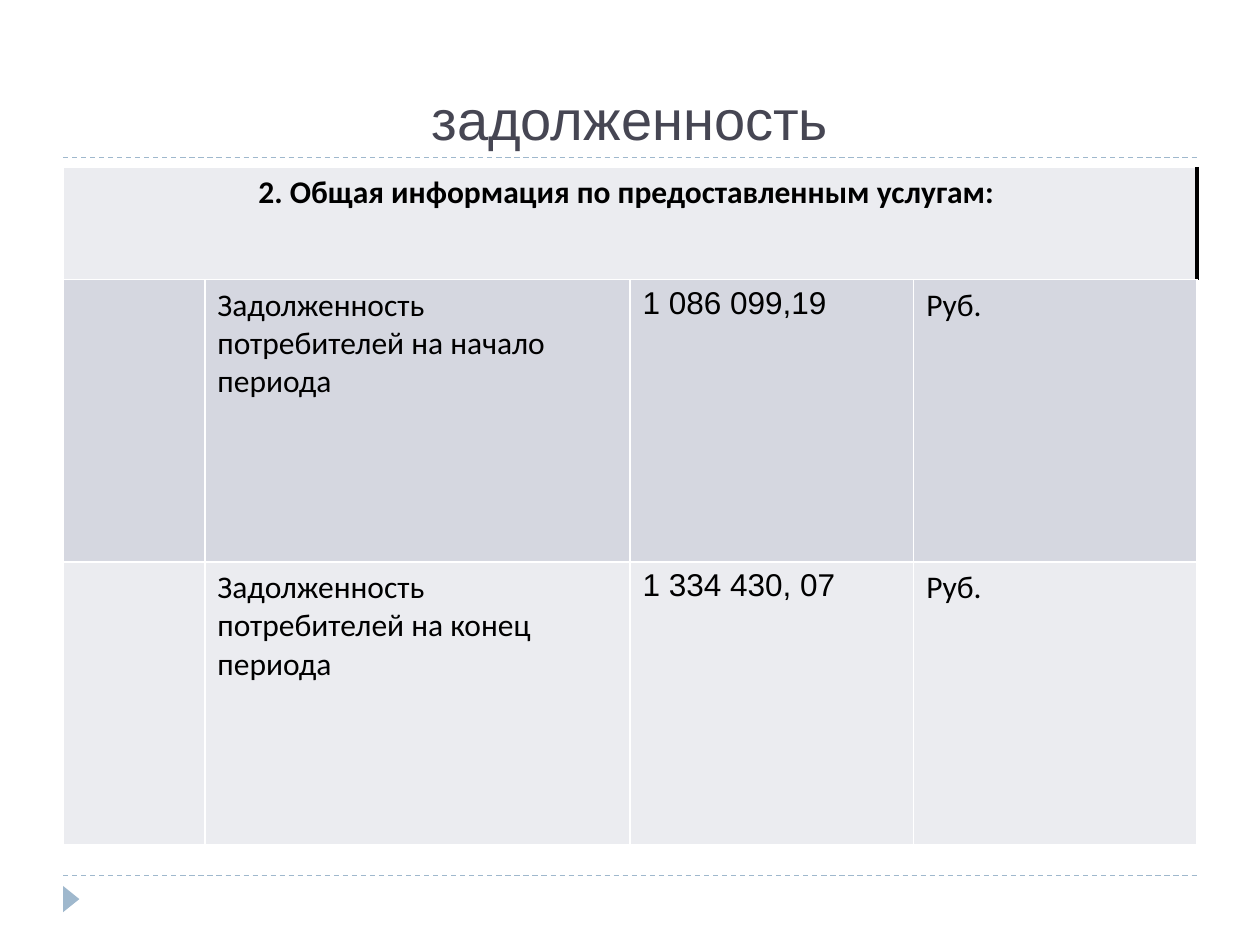
from dataclasses import dataclass

from lxml.etree import SubElement
from pptx import Presentation
from pptx.dml.color import RGBColor
from pptx.enum.dml import MSO_LINE
from pptx.enum.shapes import MSO_CONNECTOR, MSO_SHAPE
from pptx.enum.text import MSO_ANCHOR, PP_ALIGN
from pptx.oxml.ns import qn
from pptx.slide import Slide
from pptx.table import Table, _Cell
from pptx.text.text import TextFrame
from pptx.util import Cm, Pt


@dataclass(frozen=True)
class Theme:
    title_color: str = "464653"
    text_color: str = "000000"
    accent: str = "9FB8CD"
    light_band: str = "EBECF0"
    dark_band: str = "D5D7E0"
    grid: str = "FFFFFF"
    heading_font: str = "Arial"
    body_font: str = "Calibri"
    title_size: float = 32
    body_size: float = 18
    rule_width: float = 0.75
    grid_width: float = 1
    edge_width: float = 2.25


@dataclass(frozen=True)
class DebtRow:
    label: str
    amount: str
    unit: str
    fill: str


THEME = Theme()
LEFT, WIDTH = 1.27, 22.86
COLUMN_WIDTHS = (2.86, 8.57, 5.72, 5.71)
ROW_HEIGHTS = (2.26, 5.69, 5.69)
RULE_TOPS = (17.65, 3.18)
TABLE_HEADING = "2. Общая информация по предоставленным услугам: "
DEBT_ROWS = (
    DebtRow("Задолженность потребителей на начало периода", "1 086 099,19", "Руб.", THEME.dark_band),
    DebtRow("Задолженность потребителей на конец периода", "1 334 430, 07", "Руб.", THEME.light_band),
)


def write_text(text_frame: TextFrame, text: str, font_name: str, size: float, color: str,
               bold: bool = False, alignment: PP_ALIGN = PP_ALIGN.LEFT) -> None:
    text_frame.text = text
    paragraph = text_frame.paragraphs[0]
    paragraph.alignment = alignment
    for run in paragraph.runs:
        run.font.name = font_name
        run.font.size = Pt(size)
        run.font.bold = bold
        run.font.color.rgb = RGBColor.from_string(color)


def add_rule(slide: Slide, top: float) -> None:
    connector = slide.shapes.add_connector(
        MSO_CONNECTOR.STRAIGHT, Cm(LEFT), Cm(top), Cm(LEFT + WIDTH), Cm(top))
    connector.line.color.rgb = RGBColor.from_string(THEME.accent)
    connector.line.width = Pt(THEME.rule_width)
    connector.line.dash_style = MSO_LINE.DASH
    SubElement(connector._element.spPr, qn("a:effectLst"))


def add_marker(slide: Slide) -> None:
    shape = slide.shapes.add_shape(
        MSO_SHAPE.ISOSCELES_TRIANGLE, Cm(1.17), Cm(17.96), Cm(0.53), Cm(0.33))
    shape.rotation = 90
    shape.shadow.inherit = False
    shape.fill.solid()
    shape.fill.fore_color.rgb = RGBColor.from_string(THEME.accent)
    shape.line.fill.background()


def add_title(slide: Slide, text: str) -> None:
    title = slide.shapes.title
    title.left, title.top, title.width, title.height = Cm(LEFT), Cm(0.64), Cm(WIDTH), Cm(2.54)
    title.text_frame.vertical_anchor = MSO_ANCHOR.BOTTOM
    write_text(title.text_frame, text, THEME.heading_font, THEME.title_size,
               THEME.title_color, alignment=PP_ALIGN.CENTER)


def style_cell(cell: _Cell, fill: str, strong_right: bool = False) -> None:
    properties = cell._tc.get_or_add_tcPr()
    for side in ("L", "R", "T", "B"):
        strong = strong_right and side == "R"
        width = THEME.edge_width if strong else THEME.grid_width
        border = SubElement(properties, qn(f"a:ln{side}"), w=str(Pt(width)))
        solid = SubElement(border, qn("a:solidFill"))
        SubElement(solid, qn("a:srgbClr"), val=THEME.text_color if strong else THEME.grid)
    cell.fill.solid()
    cell.fill.fore_color.rgb = RGBColor.from_string(fill)


def fill_debt_row(table: Table, index: int, row: DebtRow) -> None:
    for cell in table.rows[index].cells:
        style_cell(cell, row.fill)
    entries = ((row.label, THEME.body_font), (row.amount, THEME.heading_font), (row.unit, THEME.body_font))
    for column, (text, font_name) in enumerate(entries, start=1):
        write_text(table.cell(index, column).text_frame, text, font_name,
                   THEME.body_size, THEME.text_color)


def add_debt_table(slide: Slide) -> None:
    table = slide.shapes.add_table(
        len(ROW_HEIGHTS), len(COLUMN_WIDTHS), Cm(LEFT), Cm(3.38),
        Cm(WIDTH), Cm(sum(ROW_HEIGHTS))).table
    for column, width in zip(table.columns, COLUMN_WIDTHS):
        column.width = Cm(width)
    for row, height in zip(table.rows, ROW_HEIGHTS):
        row.height = Cm(height)
    last_column = len(COLUMN_WIDTHS) - 1
    heading = table.cell(0, 0)
    heading.merge(table.cell(0, last_column))
    for column, cell in enumerate(table.rows[0].cells):
        style_cell(cell, THEME.light_band, strong_right=column in (0, last_column))
    write_text(heading.text_frame, TABLE_HEADING, THEME.body_font, THEME.body_size,
               THEME.text_color, bold=True, alignment=PP_ALIGN.CENTER)
    for index, debt_row in enumerate(DEBT_ROWS, start=1):
        fill_debt_row(table, index, debt_row)


def main() -> None:
    presentation = Presentation()
    presentation.slide_width, presentation.slide_height = Cm(25.4), Cm(19.05)
    slide = presentation.slides.add_slide(presentation.slide_layouts.get_by_name("Title Only"))
    for top in RULE_TOPS:
        add_rule(slide, top)
    add_marker(slide)
    add_title(slide, "задолженность")
    add_debt_table(slide)
    presentation.save("out.pptx")


if __name__ == "__main__":
    main()
